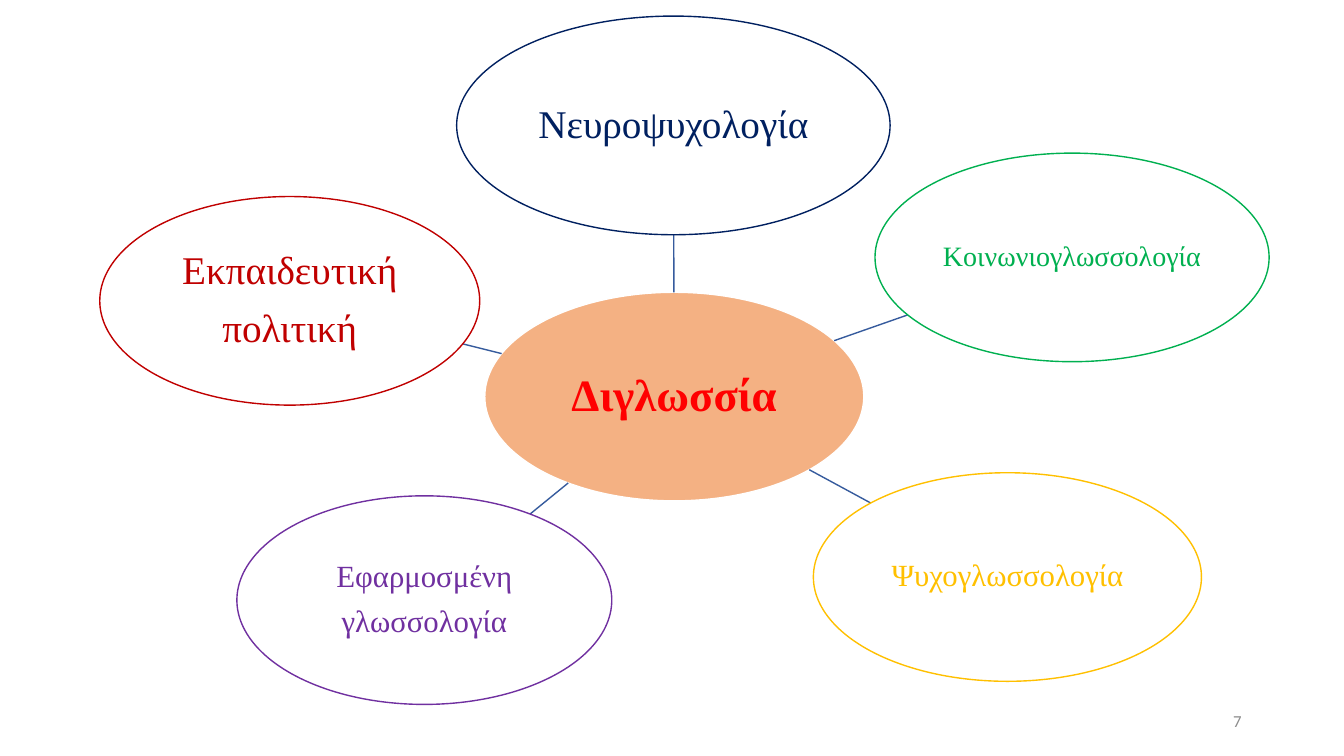
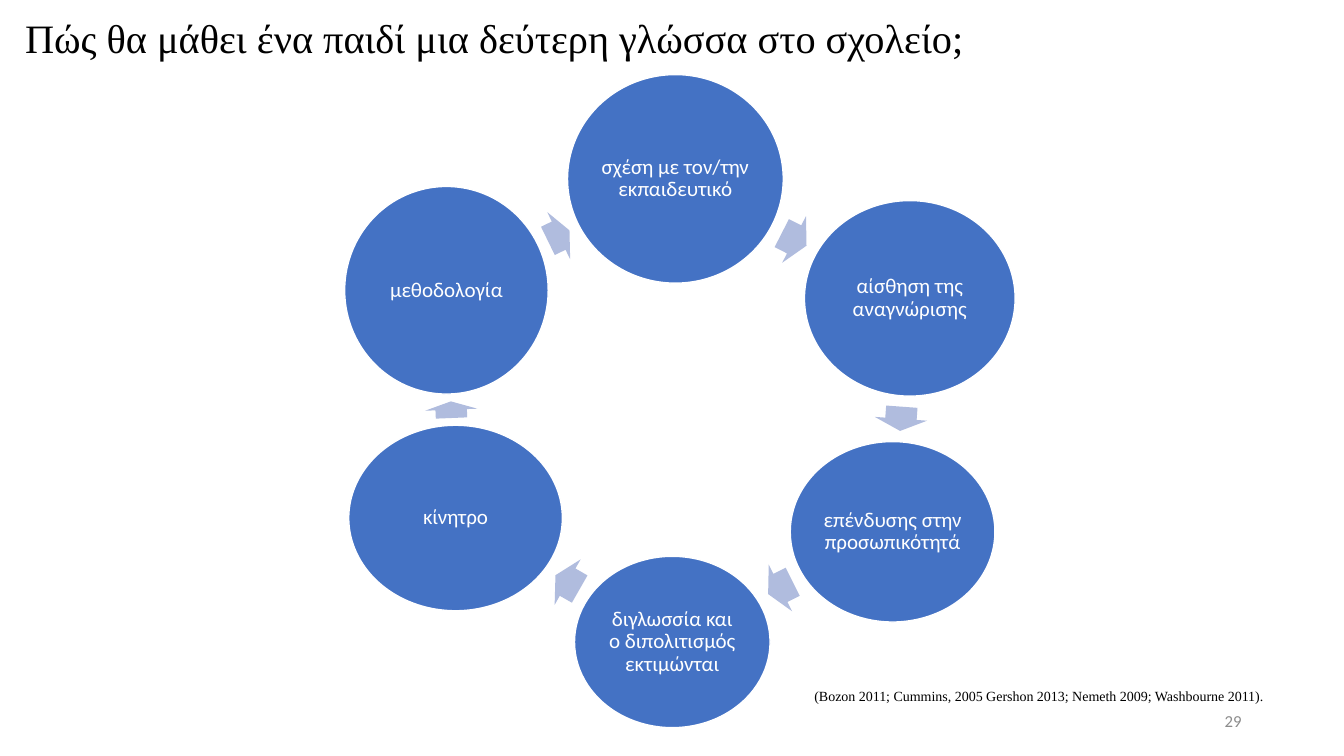
from math import atan2, degrees, hypot

from pptx import Presentation
from pptx.dml.color import RGBColor
from pptx.enum.shapes import MSO_CONNECTOR as CONN, MSO_SHAPE as SHAPE
from pptx.enum.text import MSO_ANCHOR as ANCHOR, PP_ALIGN as ALIGN
from pptx.oxml.ns import qn
from pptx.util import Pt

SERIF, SANS = "Times New Roman", "Calibri"
WHITE = RGBColor(0xFF, 0xFF, 0xFF)
BLACK = RGBColor(0x00, 0x00, 0x00)
GRAY = RGBColor(0x8C, 0x8C, 0x8C)
RED = RGBColor(0xFF, 0x00, 0x00)
PEACH = RGBColor(0xF4, 0xB1, 0x83)
NAVY = RGBColor(0x00, 0x20, 0x60)
GREEN = RGBColor(0x00, 0xB0, 0x50)
GOLD = RGBColor(0xFF, 0xC0, 0x00)
PURPLE = RGBColor(0x70, 0x30, 0xA0)
CRIMSON = RGBColor(0xC0, 0x00, 0x00)
SPOKE = RGBColor(0x36, 0x5B, 0x9D)
BLUE = RGBColor(0x44, 0x72, 0xC4)
PALE_BLUE = RGBColor(0xB0, 0xBC, 0xDE)

HUB = ("Διγλωσσία", (346.3, 208.8, 270.7, 149))
FIELDS = [
    (["Νευροψυχολογία"], (326.2, 11.5, 309.6, 156.2), 28, NAVY),
    (["Κοινωνιογλωσσολογία"], (625, 109.4, 281.5, 149), 20, GREEN),
    (["Ψυχογλωσσολογία"], (581, 337.7, 277.2, 149), 22, GOLD),
    (["Εφαρμοσμένη", "γλωσσολογία"], (169.2, 354.2, 267.8, 149), 22, PURPLE),
    (["Εκπαιδευτική", "πολιτική"], (71.3, 140.4, 271.4, 149), 28, CRIMSON),
]

TITLE = "Πώς θα μάθει ένα παιδί μια δεύτερη γλώσσα στο σχολείο;"
CYCLE = [
    ("σχέση με τον/την εκπαιδευτικό", (405.4, 53.3, 154.1, 149)),
    ("αίσθηση της αναγνώρισης", (574.6, 143.3, 150.5, 139.7)),
    ("επένδυσης στην προσωπικότητά", (564.5, 315.4, 146.2, 128.9)),
    ("διγλωσσία και ο διπολιτισμός εκτιμώνται", (410.4, 397.4, 139.7, 122.4)),
    ("κίνητρο", (249.1, 303.8, 152.6, 132.5)),
    ("μεθοδολογία", (246.2, 133.2, 145.4, 148.3)),
]
SOURCES = "(Bozon 2011; Cummins, 2005 Gershon 2013; Nemeth 2009; Washbourne 2011)."
ARROW_SHARE, ARROW_WIDTH = 0.53, 37.4


def write(tf, lines, size, font, color, align=ALIGN.LEFT, bold=False, spacing=1.0, after=0):
    tf.word_wrap = True
    for i, line in enumerate(lines):
        p = tf.paragraphs[0] if i == 0 else tf.add_paragraph()
        p.alignment, p.line_spacing, p.space_after = align, spacing, Pt(after)
        r = p.add_run()
        r.text = line
        r.font.size, r.font.name, r.font.bold = Pt(size), font, bold
        r.font.color.rgb = color


def add_text(s, box, text, size, font, color, anchor=ANCHOR.MIDDLE, **style):
    tf = s.shapes.add_textbox(*map(Pt, box)).text_frame
    tf.vertical_anchor = anchor
    write(tf, [text], size, font, color, **style)


def add_ellipse(s, box, lines, size, font, color, fill=None, line=WHITE, bold=False):
    sp = s.shapes.add_shape(SHAPE.OVAL, *map(Pt, box))
    sp.shadow.inherit = False
    if fill is None:
        sp.fill.background()
    else:
        sp.fill.solid()
        sp.fill.fore_color.rgb = fill
    sp.line.color.rgb, sp.line.width = line, Pt(1)
    tf = sp.text_frame
    tf.margin_left = tf.margin_right = tf.margin_top = tf.margin_bottom = Pt(1.4)
    tf.vertical_anchor = ANCHOR.MIDDLE
    write(tf, lines, size, font, color, ALIGN.CENTER, bold, 0.9, size * 0.4)


def center(box):
    x, y, w, h = box
    return x + w / 2, y + h / 2


def rim(box, other):
    (x, y), (ox, oy) = center(box), center(other)
    t = 1 / hypot((ox - x) / (box[2] / 2), (oy - y) / (box[3] / 2))
    return x + t * (ox - x), y + t * (oy - y)


def add_spoke(s, box, other):
    ends = rim(box, other) + rim(other, box)
    c = s.shapes.add_connector(CONN.STRAIGHT, *map(Pt, ends))
    c.line.color.rgb, c.line.width = SPOKE, Pt(1)
    sp_pr = c._element.spPr
    sp_pr.append(sp_pr.makeelement(qn("a:effectLst"), {}))


def add_arrow(s, box, other):
    (x1, y1), (x2, y2) = rim(box, other), rim(other, box)
    length = ARROW_SHARE * hypot(x2 - x1, y2 - y1)
    left, top = (x1 + x2 - length) / 2, (y1 + y2 - ARROW_WIDTH) / 2
    sp = s.shapes.add_shape(SHAPE.RIGHT_ARROW, *map(Pt, (left, top, length, ARROW_WIDTH)))
    sp.adjustments[0], sp.adjustments[1] = 0.6, 0.5
    sp.rotation = degrees(atan2(y2 - y1, x2 - x1))
    sp.shadow.inherit = False
    sp.fill.solid()
    sp.fill.fore_color.rgb = PALE_BLUE
    sp.line.fill.background()


def new_slide(prs, number):
    s = prs.slides.add_slide(prs.slide_layouts[6])
    add_text(s, (678, 500.5, 216, 28.8), number, 12, SANS, GRAY, align=ALIGN.RIGHT)
    return s


def build_fields(prs):
    s = new_slide(prs, "7")
    name, hub = HUB
    add_ellipse(s, hub, [name], 32, SERIF, RED, fill=PEACH, bold=True)
    for lines, box, size, color in FIELDS:
        add_spoke(s, hub, box)
        add_ellipse(s, box, lines, size, SERIF, color, line=color)


def build_cycle(prs):
    s = new_slide(prs, "29")
    add_text(s, (10.8, 10.8, 828, 36.7), TITLE, 28.8, SERIF, BLACK, spacing=0.9)
    for i, (text, box) in enumerate(CYCLE):
        add_ellipse(s, box, [text], 15, SANS, WHITE, fill=BLUE)
        add_arrow(s, box, CYCLE[(i + 1) % len(CYCLE)][1])
    add_text(s, (574.6, 487.4, 380, 19.4), SOURCES, 10, SERIF, BLACK, ANCHOR.TOP)


def main():
    """Build the two slides on bilingualism."""
    prs = Presentation()
    prs.slide_width, prs.slide_height = Pt(960), Pt(540)
    build_fields(prs)
    build_cycle(prs)
    prs.save("out.pptx")


if __name__ == "__main__":
    main()
